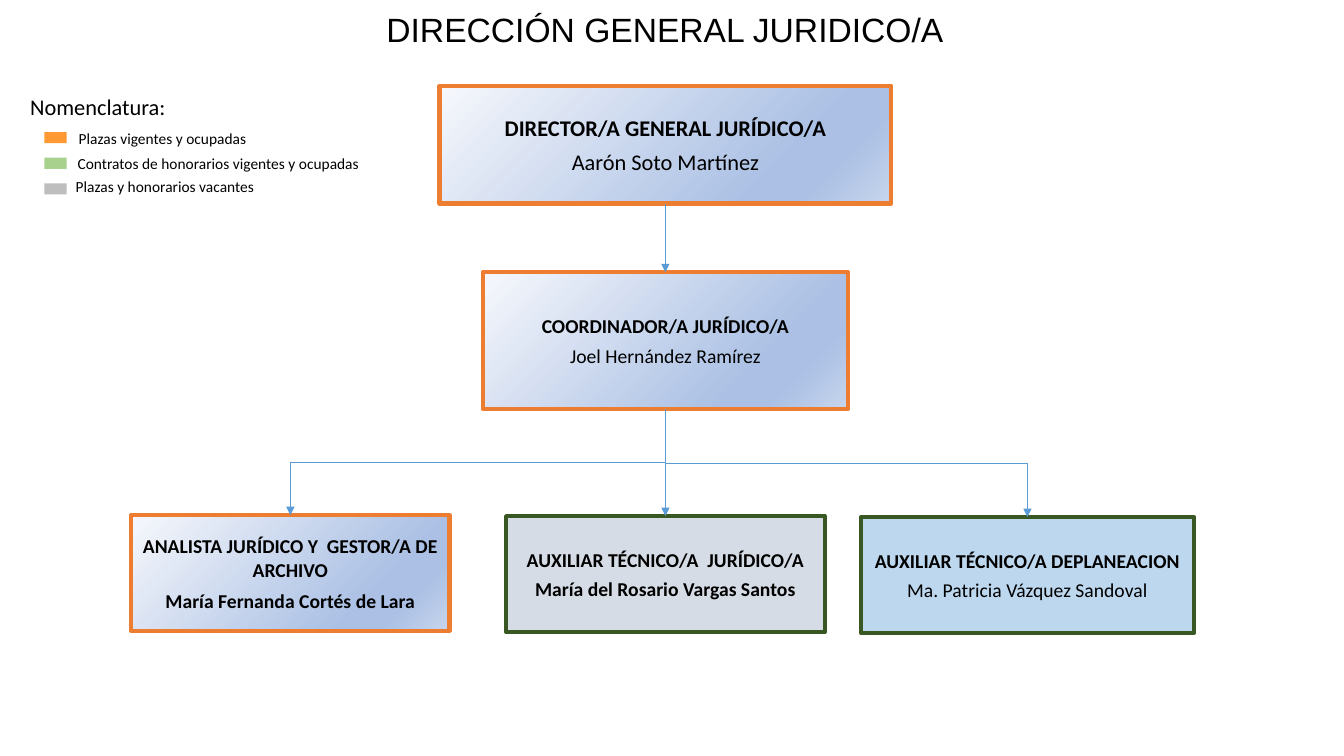
import pptx
import pptx.util
import pptx.dml.color
import pptx.enum.shapes
import pptx.enum.text
import pptx.oxml.ns
import lxml.etree

Inches, Pt = pptx.util.Inches, pptx.util.Pt
RGBColor = pptx.dml.color.RGBColor
qn = pptx.oxml.ns.qn
CENTER = pptx.enum.text.PP_ALIGN.CENTER
MIDDLE = pptx.enum.text.MSO_ANCHOR.MIDDLE
RECTANGLE = pptx.enum.shapes.MSO_SHAPE.RECTANGLE
CONNECTOR = pptx.enum.shapes.MSO_CONNECTOR

COLORS = {
    "black": "000000", "orange": "ED7D31", "green": "385723",
    "gray": "D6DCE5", "blue": "BDD7EE", "arrow": "5B9BD5",
    "occupied": "FF9933", "contract": "A9D18E", "vacant": "BEBEBE",
}
GRADIENT = [(0, "F6F8FC"), (74, "ABC0E4"), (83, "ABC0E4"), (100, "C7D5ED")]


def style_text(para, size, font="Calibri", bold=False):
    for span in para.runs:
        span.font.name = font
        span.font.size = Pt(size)
        span.font.bold = bold
        span.font.color.rgb = RGBColor.from_string(COLORS["black"])


def style_arrow(arrow):
    arrow.line.color.rgb = RGBColor.from_string(COLORS["arrow"])
    arrow.line.width = Pt(0.5)
    properties = arrow._element.spPr
    line = properties.find(qn("a:ln"))
    lxml.etree.SubElement(line, qn("a:tailEnd"), type="triangle")
    lxml.etree.SubElement(properties, qn("a:effectLst"))


deck = pptx.Presentation()
deck.slide_width, deck.slide_height = Inches(13.33), Inches(7.5)
page = deck.slides.add_slide(deck.slide_layouts[5])

# Title
title = page.shapes.title
title.left, title.top = Inches(2.38), Inches(0.04)
title.width, title.height = Inches(8.43), Inches(0.5)
title.text_frame.text = "DIRECCIÓN GENERAL JURIDICO/A"
title.text_frame.vertical_anchor = MIDDLE
title.text_frame.paragraphs[0].alignment = CENTER
style_text(title.text_frame.paragraphs[0], 24, "Arial")

# Positions: centre, top, width, height, fill, border, size, space before, bold name, lines
positions = {
    "director": (6.6, 0.85, 4.48, 1.17, None, "orange", 16, 4.7, False,
                 "DIRECTOR/A GENERAL JURÍDICO/A\nAarón Soto Martínez"),
    "coordinator": (6.6, 2.7, 3.62, 1.36, None, "orange", 14, 5.2, False,
                    "COORDINADOR/A JURÍDICO/A\nJoel Hernández Ramírez"),
    "analyst": (2.88, 5.11, 3.16, 1.15, None, "orange", 14, 5.2, True,
                "ANALISTA JURÍDICO Y  GESTOR/A DE ARCHIVO\nMaría Fernanda Cortés de Lara"),
    "legal": (6.6, 5.12, 3.16, 1.15, "gray", "green", 14, 4.2, True,
              "AUXILIAR TÉCNICO/A  JURÍDICO/A\nMaría del Rosario Vargas Santos"),
    "planning": (10.19, 5.13, 3.3, 1.15, "blue", "green", 14, 4.2, False,
                 "AUXILIAR TÉCNICO/A DEPLANEACION\nMa. Patricia Vázquez Sandoval"),
}
boxes = {}
for name, (center, top, width, height, fill, border, size, space, bold, lines) in positions.items():
    box = page.shapes.add_shape(RECTANGLE, Inches(center - width / 2), Inches(top),
                                Inches(width), Inches(height))
    box.shadow.inherit = False
    if fill:
        box.fill.solid()
        box.fill.fore_color.rgb = RGBColor.from_string(COLORS[fill])
    else:
        box.fill.gradient()
        box.fill.gradient_angle = 315
        stops = box._element.spPr.find(qn("a:gradFill")).find(qn("a:gsLst"))
        for stop in list(stops):
            stops.remove(stop)
        for percent, color in GRADIENT:
            stop = lxml.etree.SubElement(stops, qn("a:gs"), pos=str(percent * 1000))
            lxml.etree.SubElement(stop, qn("a:srgbClr"), val=color)
    box.line.color.rgb = RGBColor.from_string(COLORS[border])
    box.line.width = Pt(3)
    box.text_frame.word_wrap = True
    box.text_frame.vertical_anchor = MIDDLE
    box.text_frame.text = lines
    for para, para_bold in zip(box.text_frame.paragraphs, (True, bold)):
        para.alignment = CENTER
        para.space_before = Pt(space)
        style_text(para, size, bold=para_bold)
    boxes[name] = box
boxes["coordinator"].text_frame.paragraphs[1].space_before = Pt(0)
boxes["coordinator"].text_frame.paragraphs[1].line_spacing = 1.25

# Straight arrows down the middle
for upper, lower in (("director", "coordinator"), ("coordinator", "legal")):
    arrow = page.shapes.add_connector(CONNECTOR.STRAIGHT, 0, 0, 0, 0)
    arrow.begin_connect(boxes[upper], 2)
    arrow.end_connect(boxes[lower], 0)
    style_arrow(arrow)

# Elbow arrows to the sides, turned so that they leave downwards
start_x, start_y = 6.6, 4.06
for name, side, degrees in (("analyst", 1, 90), ("planning", -1, 270)):
    end_x, end_y = positions[name][:2]
    middle_x, middle_y = (start_x + end_x) / 2, (start_y + end_y) / 2
    half_drop, half_reach = (end_y - start_y) / 2, abs(end_x - start_x) / 2
    arrow = page.shapes.add_connector(
        CONNECTOR.ELBOW,
        Inches(middle_x - side * half_drop), Inches(middle_y - half_reach),
        Inches(middle_x + side * half_drop), Inches(middle_y + half_reach))
    arrow._element.spPr.find(qn("a:xfrm")).set("rot", str(degrees * 60000))
    style_arrow(arrow)

# Legend swatches
for row, color in enumerate(("occupied", "contract", "vacant")):
    swatch = page.shapes.add_shape(RECTANGLE, Inches(0.44), Inches(1.31 + 0.255 * row),
                                   Inches(0.22), Inches(0.11))
    swatch.shadow.inherit = False
    swatch.fill.solid()
    swatch.fill.fore_color.rgb = RGBColor.from_string(COLORS[color])
    swatch.line.fill.background()

# Legend texts
for left, top, width, height, size, words in (
        (0.3, 0.91, 1.74, 0.28, 16, "Nomenclatura:"),
        (0.78, 1.27, 1.72, 0.2, 11, "Plazas vigentes y ocupadas"),
        (0.77, 1.52, 2.87, 0.2, 11, "Contratos de honorarios vigentes y ocupadas"),
        (0.75, 1.75, 2.65, 0.2, 11, "Plazas y honorarios vacantes")):
    label = page.shapes.add_textbox(Inches(left), Inches(top), Inches(width), Inches(height))
    frame = label.text_frame
    frame.word_wrap = True
    frame.margin_left = frame.margin_right = frame.margin_bottom = 0
    frame.margin_top = Inches(0.01)
    frame.text = words
    frame.paragraphs[0].space_before = Pt(1.1)
    style_text(frame.paragraphs[0], size)

deck.save("out.pptx")
